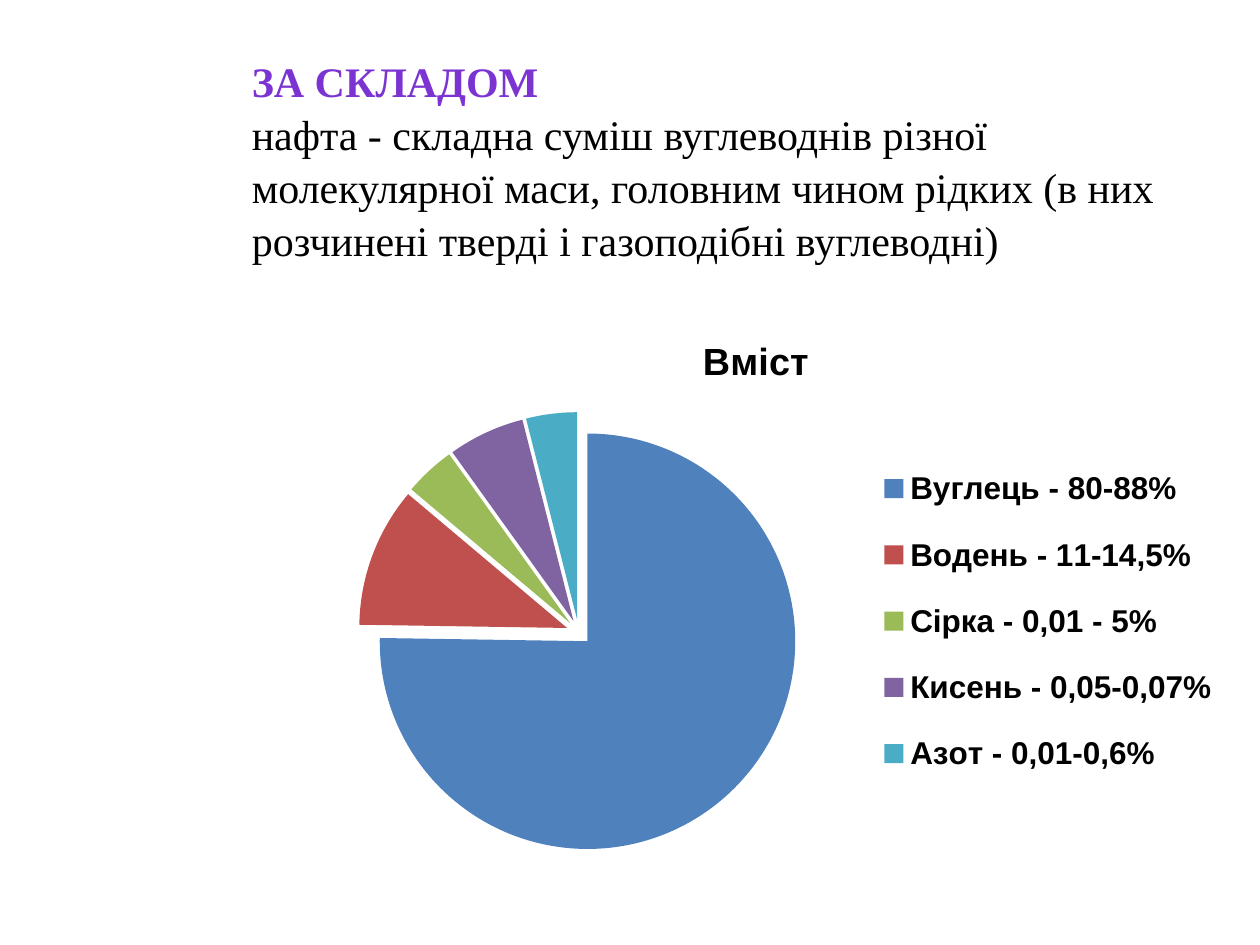
from lxml.etree import SubElement
from pptx import Presentation
from pptx.chart.data import CategoryChartData
from pptx.dml.color import RGBColor
from pptx.enum.chart import XL_CHART_TYPE as ChartType, XL_LEGEND_POSITION as LegendPosition
from pptx.oxml.ns import qn
from pptx.util import Inches, Pt

HEADING = "ЗА СКЛАДОМ"
DEFINITION = ("нафта - складна суміш вуглеводнів різної молекулярної маси, головним чином "
              "рідких (в них розчинені тверді і газоподібні вуглеводні)")
CHART_TITLE = "Вміст"
CONTENTS = [  # legend label, share, slice colour
    ("Вуглець - 80-88%", 76, "4F81BD"),
    ("Водень - 11-14,5%", 11, "C0504D"),
    ("Сірка - 0,01 - 5%", 4, "9BBB59"),
    ("Кисень - 0,05-0,07%", 6, "8064A2"),
    ("Азот - 0,01-0,6%", 4, "4BACC6"),
]


def color(hex_string):
    return RGBColor.from_string(hex_string)


def set_layout(parent, index, inner=False, **shares):
    """Place a chart part by shares (x, y, w, h) of the chart's size."""
    for old in parent.findall(qn("c:layout")):
        parent.remove(old)
    layout = SubElement(parent, qn("c:layout"))
    parent.insert(index, layout)
    manual = SubElement(layout, qn("c:manualLayout"))
    if inner:
        SubElement(manual, qn("c:layoutTarget"), val="inner")
    for mode in ("xMode", "yMode"):
        SubElement(manual, qn(f"c:{mode}"), val="edge")
    for name, share in shares.items():
        SubElement(manual, qn(f"c:{name}"), val=str(share))


class SlideBuilder:
    text_font = "Times New Roman"
    chart_font = "Arial"
    accent, ink = "7B34D2", "000000"

    def __init__(self, presentation):
        self.width, self.height = presentation.slide_width, presentation.slide_height
        self.slide = presentation.slides.add_slide(presentation.slide_layouts[6])

    def place(self, left, top, width, height):
        """Turn shares of the slide into lengths."""
        return (round(left * self.width), round(top * self.height),
                round(width * self.width), round(height * self.height))

    def style(self, font, name, size, bold=None, hex_color=ink):
        font.name, font.size, font.bold = name, Pt(size), bold
        font.color.rgb = color(hex_color)

    def text(self, heading, body, *shares):
        frame = self.slide.shapes.add_textbox(*self.place(*shares)).text_frame
        frame.word_wrap = True
        paragraph = frame.paragraphs[0]
        paragraph.line_spacing = 1.05
        paragraph.font.name, paragraph.font.size = self.text_font, Pt(24)
        heading_run = paragraph.add_run()
        heading_run.text = heading
        heading_run.font.bold = True
        heading_run.font.color.rgb = color(self.accent)
        paragraph.add_line_break()
        body_run = paragraph.add_run()
        body_run.text = body
        body_run.font.color.rgb = color(self.ink)

    def pie(self, title, slices, explosion, *shares):
        labels, values, colors = zip(*slices)
        data = CategoryChartData()
        data.categories = labels
        data.add_series(title, values)
        chart = self.slide.shapes.add_chart(ChartType.PIE, *self.place(*shares), data).chart
        self.style(chart.font, self.chart_font, 18)

        chart.has_title = True
        chart.chart_title.text_frame.text = title
        title_paragraph = chart.chart_title.text_frame.paragraphs[0]
        self.style(title_paragraph.font, self.chart_font, 21.6, True)

        chart.has_legend = True
        chart.legend.position = LegendPosition.RIGHT
        chart.legend.include_in_layout = False
        self.style(chart.legend.font, self.chart_font, 18, True)

        plot = chart.plots[0]
        plot.vary_by_categories = True
        series_element = chart.element.find(f".//{qn('c:ser')}")
        exploded = SubElement(series_element, qn("c:explosion"), val=str(explosion))
        series_element.find(qn("c:tx")).addnext(exploded)
        for index, hex_color in enumerate(colors):
            fill = plot.series[0].points[index].format.fill
            fill.solid()
            fill.fore_color.rgb = color(hex_color)

        set_layout(chart.element.find(f".//{qn('c:plotArea')}"), 0, inner=True,
                   x=0.08, y=0.18, w=0.47, h=0.79)
        set_layout(chart.element.find(f".//{qn('c:legend')}"), 1,
                   x=0.62, y=0.23, w=0.37, h=0.65)


def main():
    presentation = Presentation()
    presentation.slide_width, presentation.slide_height = Inches(10), Inches(7.5)
    builder = SlideBuilder(presentation)
    builder.text(HEADING, DEFINITION, 0.19, 0.05, 0.77, 0.27)
    builder.pie(CHART_TITLE, CONTENTS, 6, 0.22, 0.33, 0.76, 0.59)
    presentation.save("out.pptx")


if __name__ == "__main__":
    main()
